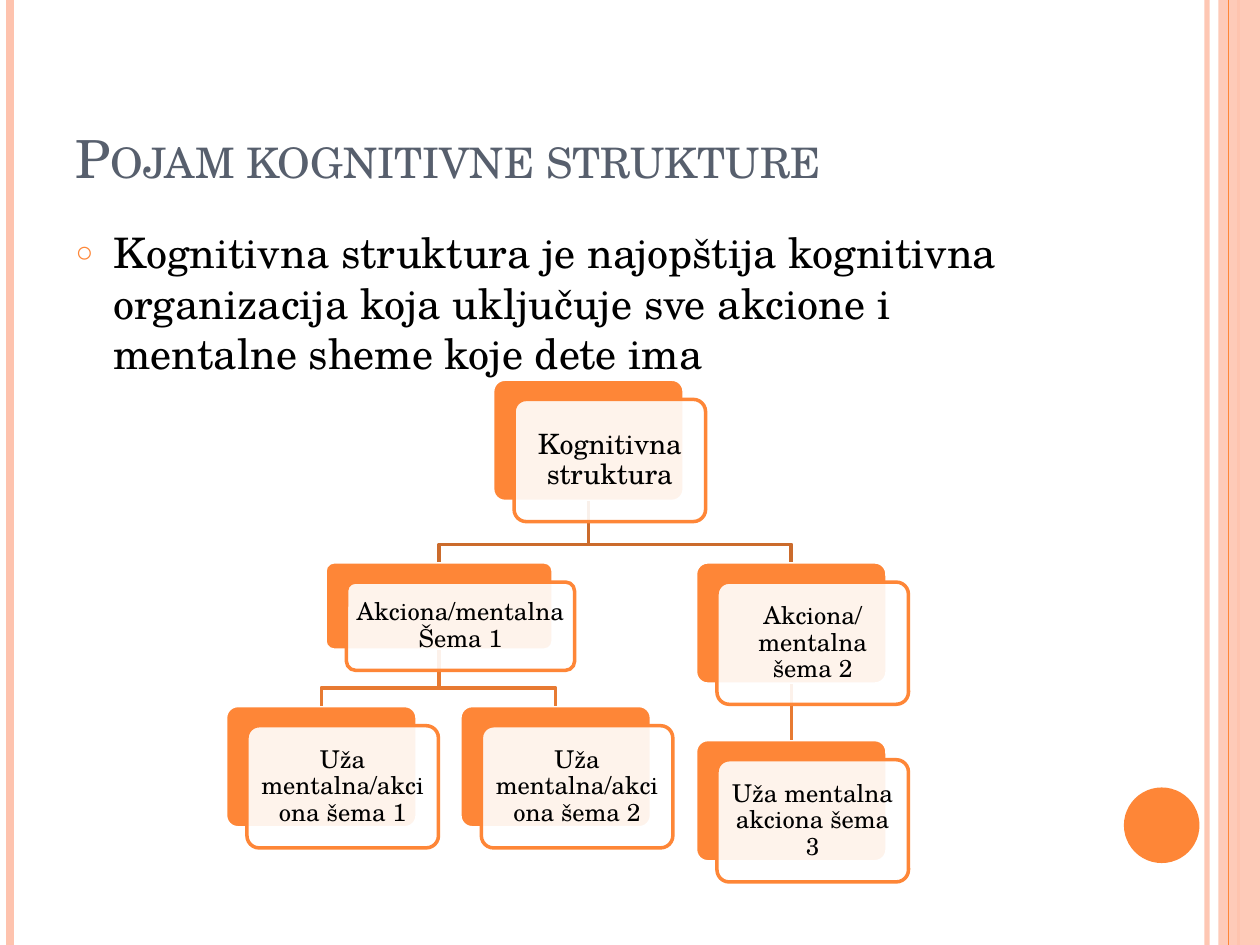
from lxml import etree
from pptx import Presentation
from pptx.dml.color import RGBColor
from pptx.enum.shapes import MSO_CONNECTOR, MSO_SHAPE
from pptx.enum.text import MSO_ANCHOR, MSO_AUTO_SIZE, PP_ALIGN
from pptx.oxml.ns import qn
from pptx.util import Inches, Pt

STRAIGHT = MSO_CONNECTOR.STRAIGHT
RECT, OVAL, ROUNDED = MSO_SHAPE.RECTANGLE, MSO_SHAPE.OVAL, MSO_SHAPE.ROUNDED_RECTANGLE
TOP, BOTTOM = 0, 2
FONT = "TeX Gyre Schola"
COLORS = {
    "orange": "FE8637", "peach": "FEC3AE", "white": "FFFFFF", "black": "000000",
    "slate": "575F6D", "upper_link": "CB6B2C", "lower_link": "E77A32",
}


def paint(color_format, color, opacity=100):
    """Set a colour and, where wanted, its opacity in percent."""
    color_format.rgb = RGBColor.from_string(COLORS[color])
    if opacity < 100:
        choice = color_format._xFill.find(qn("a:srgbClr"))
        etree.SubElement(choice, qn("a:alpha"), val=str(opacity * 1000))


def add_filled(kind, box, fill, opacity=100, line=None):
    shape = slide.shapes.add_shape(kind, *map(Inches, box))
    shape.shadow.inherit = False
    shape.fill.solid()
    paint(shape.fill.fore_color, fill, opacity)
    if line:
        paint(shape.line.color, line)
        shape.line.width = Pt(2)
    else:
        shape.line.fill.background()
    return shape


prs = Presentation()
prs.slide_width, prs.slide_height = Inches(10), Inches(7.5)
slide = prs.slides.add_slide(prs.slide_layouts[1])

# Edge decoration: the band lies over the first two rules and under the others
add_filled(RECT, (9.67, 0, 0.33, 7.5), "peach", 87)
for x, color, width, opacity in [
    (9.58, "peach", 3, 93), (0.08, "peach", 4.5, 100),
    (9.83, "peach", 1.5, 100), (9.75, "orange", 0.75, 100),
]:
    rule = slide.shapes.add_connector(STRAIGHT, Inches(x), 0, Inches(x), Inches(7.5))
    paint(rule.line.color, color, opacity)
    rule.line.width = Pt(width)
    etree.SubElement(rule._element.spPr, qn("a:effectLst"))
add_filled(OVAL, (8.92, 6.25, 0.6, 0.6), "orange")

# Title and body text
title, body = slide.shapes.title, slide.placeholders[1]
for holder, top, height, anchor, size, color, text in [
    (title, 0.3, 1.25, MSO_ANCHOR.BOTTOM, 30, "slate", "Pojam kognitivne strukture"),
    (body, 1.75, 5.33, MSO_ANCHOR.TOP, 24, "black",
     "Kognitivna struktura je najopštija kognitivna organizacija "
     "koja uključuje sve akcione i mentalne sheme koje dete ima"),
]:
    holder.left, holder.top = Inches(0.5), Inches(top)
    holder.width, holder.height = Inches(8.17), Inches(height)
    frame = holder.text_frame
    frame.text = text
    frame.auto_size = MSO_AUTO_SIZE.NONE
    frame.vertical_anchor = anchor
    paragraph = frame.paragraphs[0]
    paragraph.alignment = PP_ALIGN.LEFT
    font = paragraph.runs[0].font
    font.name, font.size = FONT, Pt(size)
    paint(font.color, color)
title.text_frame.paragraphs[0].runs[0].font._element.set("cap", "small")

# Round bullet of the body paragraph
definition = body.text_frame.paragraphs[0]
definition.space_before = Pt(6)
bullet = definition._p.get_or_add_pPr()
bullet.set("marL", str(Inches(0.3)))
bullet.set("indent", str(Inches(-0.3)))
bullet_color = etree.SubElement(bullet, qn("a:buClr"))
etree.SubElement(bullet_color, qn("a:srgbClr"), val=COLORS["orange"])
etree.SubElement(bullet, qn("a:buSzPct"), val="70000")
etree.SubElement(bullet, qn("a:buChar"), char="○")

# Hierarchy: key -> left, top, width, height, text size, text
NODES = {
    "root": (3.91, 3.01, 1.52, 0.97, 16, "Kognitivna struktura"),
    "scheme1": (2.58, 4.46, 1.81, 0.7, 14, "Akciona/mentalna Šema 1"),
    "narrow1": (1.79, 5.6, 1.52, 0.97, 14, "Uža mentalna/akciona šema 1"),
    "narrow2": (3.65, 5.6, 1.52, 0.97, 14, "Uža mentalna/akciona šema 2"),
    "scheme2": (5.52, 4.46, 1.52, 0.97, 14, "Akciona/mentalna šema 2"),
    "narrow3": (5.52, 5.87, 1.52, 0.97, 14, "Uža mentalna akciona šema 3"),
}
LINKS = [
    ("root", "scheme1", "upper_link"), ("root", "scheme2", "upper_link"),
    ("scheme1", "narrow1", "lower_link"), ("scheme1", "narrow2", "lower_link"),
    ("scheme2", "narrow3", "lower_link"),
]
CARD_SHIFT = 0.17
ELBOW_RISE = Inches(0.14)

# Back plates
plates = {}
for key, (left, top, width, height, size, text) in NODES.items():
    plates[key] = add_filled(ROUNDED, (left, top, width, height), "orange", line="white")
    plates[key].adjustments[0] = 0.1

# Links, from bottom centre of the parent to top centre of the child
for parent_key, child_key, color in LINKS:
    parent, child = plates[parent_key], plates[child_key]
    start_x, start_y = parent.left + parent.width // 2, parent.top + parent.height
    end_x, end_y = child.left + child.width // 2, child.top
    if start_x == end_x:
        link = slide.shapes.add_connector(STRAIGHT, start_x, start_y, end_x, end_y)
        link.begin_connect(parent, BOTTOM)
        link.end_connect(child, TOP)
        etree.SubElement(link._element.spPr, qn("a:effectLst"))
    else:
        bend_y = end_y - ELBOW_RISE
        path_builder = slide.shapes.build_freeform(start_x, start_y)
        path_builder.add_line_segments(
            [(start_x, bend_y), (end_x, bend_y), (end_x, end_y)], close=False)
        link = path_builder.convert_to_shape()
        link.fill.background()
        link.shadow.inherit = False
    paint(link.line.color, color)
    link.line.width = Pt(2)

# Front cards with the text
for left, top, width, height, size, text in NODES.values():
    card = add_filled(ROUNDED, (left + CARD_SHIFT, top + CARD_SHIFT - 0.01, width, height),
                      "white", 90, "orange")
    card.adjustments[0] = 0.1
    frame = card.text_frame
    frame.text = text
    frame_format = {"word_wrap": True, "vertical_anchor": MSO_ANCHOR.MIDDLE}
    for side in ("left", "top", "right", "bottom"):
        frame_format["margin_" + side] = Inches(0.07 if size == 16 else 0.06)
    for name, value in frame_format.items():
        setattr(frame, name, value)
    paragraph = frame.paragraphs[0]
    paragraph.alignment, paragraph.line_spacing = PP_ALIGN.CENTER, 0.9
    font = paragraph.runs[0].font
    font.name, font.size = FONT, Pt(size)
    paint(font.color, "black")

prs.save("out.pptx")
